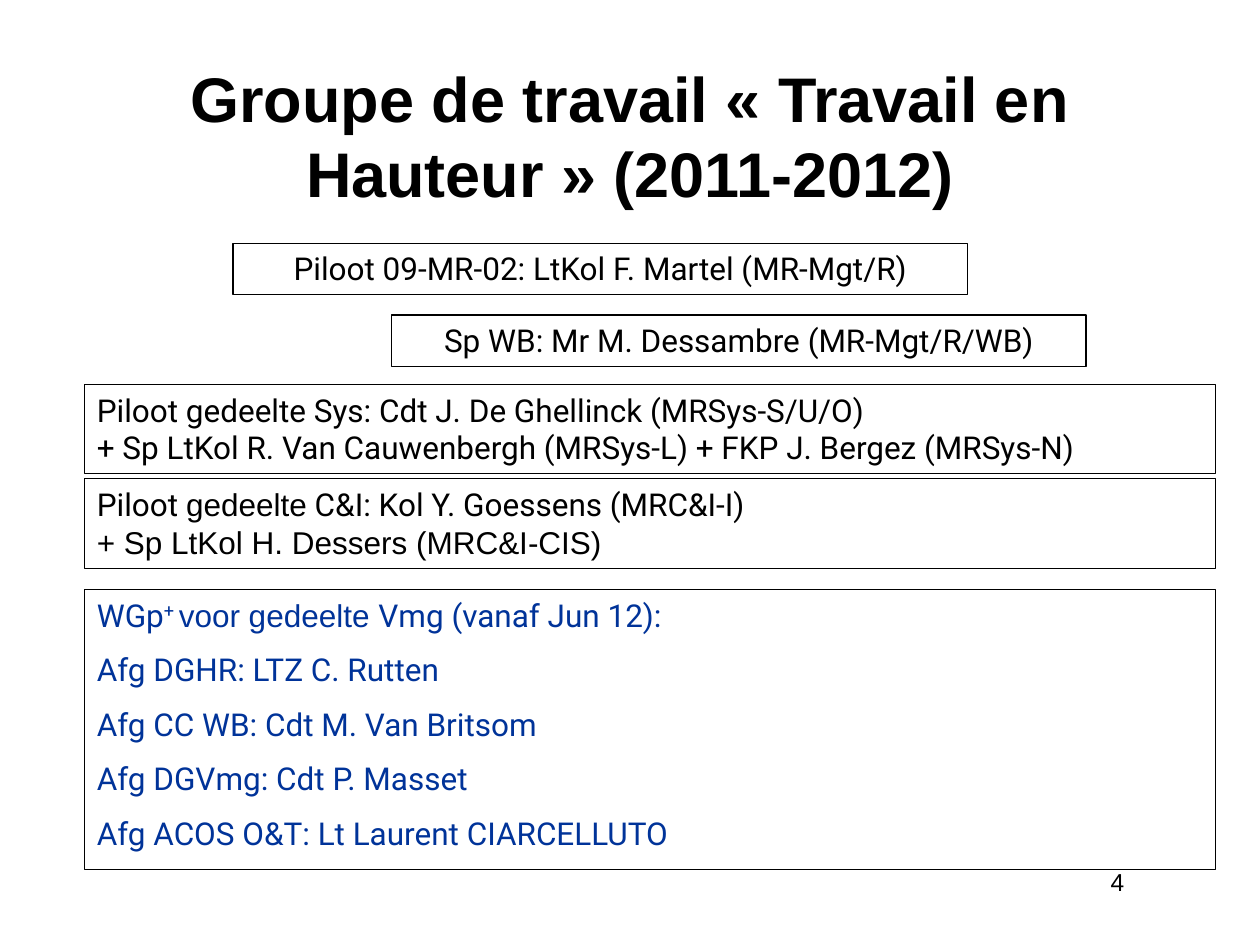
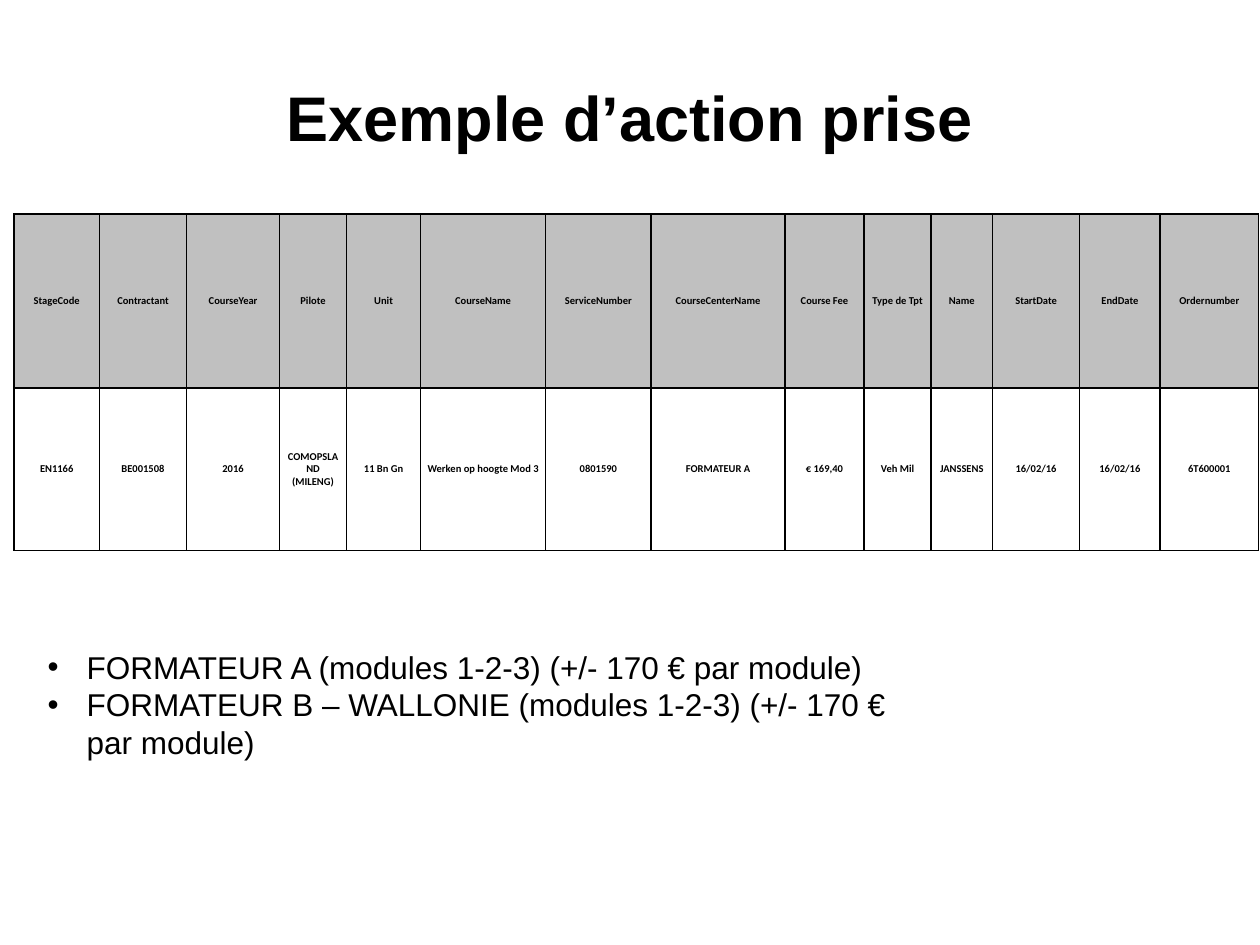
from lxml import etree
from pptx import Presentation
from pptx import util as u
from pptx.dml.color import RGBColor
from pptx.enum import shapes, text
from pptx.oxml import ns

BLACK = RGBColor(0x00, 0x00, 0x00)
WHITE = RGBColor(0xFF, 0xFF, 0xFF)
GREY = RGBColor(0xC0, 0xC0, 0xC0)
BLUE = RGBColor(0x00, 0x33, 0x99)
ARIAL, ROBOTO, CALIBRI = "Arial", "Roboto", "Calibri"
LEFT, CENTER, RIGHT = text.PP_ALIGN.LEFT, text.PP_ALIGN.CENTER, text.PP_ALIGN.RIGHT
TOP, MIDDLE = text.MSO_ANCHOR.TOP, text.MSO_ANCHOR.MIDDLE

COURSE_COLUMNS = [
    ("StageCode", "EN1166", 0.68),
    ("Contractant", "BE001508", 0.69),
    ("CourseYear", "2016", 0.74),
    ("Pilote", "COMOPSLAND (MILENG)", 0.53),
    ("Unit", "11 Bn Gn", 0.59),
    ("CourseName", "Werken op hoogte Mod 3", 0.99),
    ("ServiceNumber", "0801590", 0.84),
    ("CourseCenterName", "FORMATEUR A", 1.06),
    ("Course Fee", "€ 169,40", 0.63),
    ("Type de Tpt", "Veh Mil", 0.53),
    ("Name", "JANSSENS", 0.49),
    ("StartDate", "16/02/16", 0.69),
    ("EndDate", "16/02/16", 0.64),
    ("Ordernumber", "6T600001", 0.78),
]


def add_bullet(paragraph, indent):
    properties = paragraph._p.get_or_add_pPr()
    properties.set("marL", str(u.Inches(indent)))
    properties.set("indent", str(-u.Inches(indent)))
    etree.SubElement(properties, ns.qn("a:buFont"), typeface=ARIAL)
    etree.SubElement(properties, ns.qn("a:buChar"), char="•")


def write(frame, paragraphs, size=18, font=ARIAL, color=BLACK, bold=False,
          align=LEFT, anchor=TOP, gap=0, bullet_indent=None):
    frame.word_wrap = True
    frame.vertical_anchor = anchor
    for index, content in enumerate(paragraphs):
        paragraph = frame.add_paragraph() if index else frame.paragraphs[0]
        paragraph.alignment = align
        if index and gap:
            paragraph.space_before = u.Pt(gap)
        if bullet_indent:
            add_bullet(paragraph, bullet_indent)
        pieces = [(content, font)] if isinstance(content, str) else content
        for words, face, *baseline in pieces:
            for number, line in enumerate(words.split("\n")):
                if number:
                    paragraph.add_line_break()
                if not line:
                    continue
                run = paragraph.add_run()
                run.text = line
                run.font.name = face
                run.font.size = u.Pt(size)
                run.font.bold = bold
                run.font.color.rgb = color
                if baseline:
                    run.font._element.set("baseline", str(baseline[0] * 1000))


def add_text(slide, area, paragraphs, **style):
    box = slide.shapes.add_textbox(*map(u.Inches, area))
    write(box.text_frame, paragraphs, **style)


def add_title(slide, title, top, height):
    add_text(slide, (0.5, top, 9, height), [title], size=36, bold=True,
             align=CENTER, anchor=MIDDLE)


def add_framed(slide, area, paragraphs, **style):
    panel = slide.shapes.add_shape(shapes.MSO_SHAPE.RECTANGLE, *map(u.Inches, area))
    panel.shadow.inherit = False
    panel.fill.background()
    panel.line.color.rgb = BLACK
    panel.line.width = u.Pt(0.75)
    write(panel.text_frame, paragraphs, font=ROBOTO, gap=9.5, **style)


def add_borders(cell):
    properties = cell._tc.get_or_add_tcPr()
    for position, side in enumerate(("lnL", "lnR", "lnT", "lnB")):
        border = etree.Element(ns.qn(f"a:{side}"), w=str(u.Pt(1)))
        fill = etree.SubElement(border, ns.qn("a:solidFill"))
        etree.SubElement(fill, ns.qn("a:srgbClr"), val=str(BLACK))
        properties.insert(position, border)


def add_course_table(slide, left, top, row_heights):
    widths = [width for *_, width in COURSE_COLUMNS]
    table = slide.shapes.add_table(
        len(row_heights), len(widths), u.Inches(left), u.Inches(top),
        u.Inches(sum(widths)), u.Inches(sum(row_heights))).table
    for row, height in zip(table.rows, row_heights):
        row.height = u.Inches(height)
    for column, (*values, width) in enumerate(COURSE_COLUMNS):
        table.columns[column].width = u.Inches(width)
        for row, (value, shade) in enumerate(zip(values, (GREY, WHITE))):
            cell = table.cell(row, column)
            cell.margin_left = cell.margin_right = u.Inches(0.04)
            cell.margin_top = cell.margin_bottom = 0
            cell.vertical_anchor = MIDDLE
            cell.fill.solid()
            cell.fill.fore_color.rgb = shade
            add_borders(cell)
            write(cell.text_frame, [value], size=6, font=CALIBRI, bold=True,
                  align=CENTER, anchor=MIDDLE)


def build_working_group(slide):
    add_title(slide, "Groupe de travail «\u00a0Travail en Hauteur\u00a0» (2011-2012)", 0.36, 1.42)
    add_framed(slide, (1.85, 1.93, 5.83, 0.41),
               ["Piloot 09-MR-02: LtKol F. Martel (MR-Mgt/R)"], align=CENTER)
    add_framed(slide, (3.11, 2.5, 5.51, 0.41),
               ["Sp WB: Mr M. Dessambre (MR-Mgt/R/WB)"], align=CENTER)

    systems = ["Piloot gedeelte Sys: Cdt J. De Ghellinck (MRSys-S/U/O)\n"
               "+ Sp LtKol R. Van Cauwenbergh (MRSys-L) + FKP J. Bergez (MRSys-N)"]
    communication = [[("Piloot ", ROBOTO), ("gedeelte", ARIAL),
                      (" C&I: Kol Y. Goessens (MRC&I-I)\n", ROBOTO),
                      ("+ Sp LtKol H. Dessers (MRC&I-CIS)", ARIAL)]]
    delegates = [[("WGp", ROBOTO), ("+ ", ROBOTO, 30), ("voor gedeelte ", ARIAL),
                  ("Vmg (vanaf Jun 12):", ROBOTO)],
                 "Afg DGHR: LTZ C. Rutten",
                 "Afg CC WB: Cdt M. Van Britsom",
                 "Afg DGVmg: Cdt P. Masset",
                 "Afg ACOS O&T: Lt Laurent CIARCELLUTO"]
    for top, height, members, color in ((3.05, 0.71, systems, BLACK),
                                        (3.8, 0.71, communication, BLACK),
                                        (4.68, 2.22, delegates, BLUE)):
        add_framed(slide, (0.67, top, 8.98, height), members, color=color)
    add_text(slide, (7.17, 6.83, 1.85, 0.52), ["4"], size=14, align=RIGHT)


def build_action_example(slide):
    add_title(slide, "Exemple d’action prise", 0.3, 1.25)
    add_course_table(slide, 0.11, 1.7, (1.38, 1.29))
    add_text(slide, (0.28, 5.09, 7.17, 1.01),
             ["FORMATEUR A (modules 1-2-3) (+/- 170 € par module)",
              "FORMATEUR B – WALLONIE (modules 1-2-3) (+/- 170 € par module)"],
             bullet_indent=0.31)


def main():
    deck = Presentation()
    deck.slide_width, deck.slide_height = u.Inches(10), u.Inches(7.5)
    for build in (build_working_group, build_action_example):
        build(deck.slides.add_slide(deck.slide_layouts[6]))
    deck.save("out.pptx")


if __name__ == "__main__":
    main()
